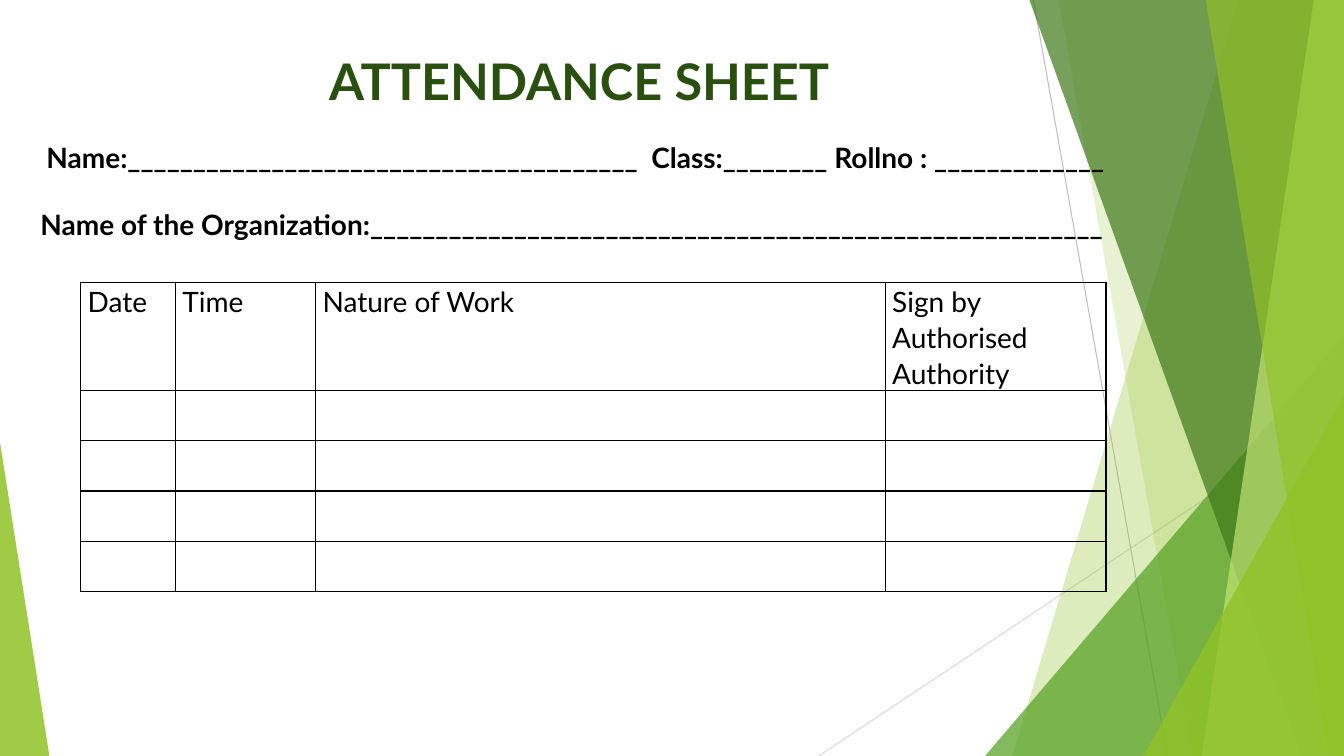
import pptx
import pptx.util
import pptx.dml.color
import pptx.enum.shapes
import pptx.enum.text
import pptx.oxml
import pptx.oxml.ns
from lxml import etree

Inches, Pt = pptx.util.Inches, pptx.util.Pt
RGBColor = pptx.dml.color.RGBColor
ALIGN = pptx.enum.text.PP_ALIGN
qn = pptx.oxml.ns.qn

BLACK = RGBColor(0x00, 0x00, 0x00)
TITLE_GREEN = RGBColor(0x2A, 0x50, 0x10)
LIME = RGBColor(0x90, 0xC2, 0x26)
GREEN = RGBColor(0x54, 0xA0, 0x21)
DARK_GREEN = RGBColor(0x3F, 0x78, 0x19)
PALE_LIME = RGBColor(0xC0, 0xE4, 0x74)
GREY = RGBColor(0xBF, 0xBF, 0xBF)
LIGHT_GREY = RGBColor(0xD9, 0xD9, 0xD9)
W, H = 13.33, 7.5


class Sheet:
    """Holds the text style and the current slide, and adds elements to it."""

    font = "Lato"

    def __init__(self, prs):
        self.s = prs.slides.add_slide(prs.slide_layouts[6])

    def line(self, x1, y1, x2, y2, color):
        c = self.s.shapes.add_connector(
            pptx.enum.shapes.MSO_CONNECTOR.STRAIGHT,
            Inches(x1), Inches(y1), Inches(x2), Inches(y2))
        c.line.color.rgb = color
        c.line.width = Pt(0.75)
        etree.SubElement(c._element.spPr, qn("a:effectLst"))

    def paint(self, sp, color, opacity):
        sp.shadow.inherit = False
        sp.fill.solid()
        sp.fill.fore_color.rgb = color
        sp.line.fill.background()
        clr = sp._element.spPr.find(qn("a:solidFill"))[0]
        etree.SubElement(clr, qn("a:alpha"), val=str(opacity * 1000))

    def band(self, points, color, opacity):
        points = [(Inches(x), Inches(y)) for x, y in points]
        fb = self.s.shapes.build_freeform(*points[0], scale=1.0)
        fb.add_line_segments(points[1:], close=True)
        self.paint(fb.convert_to_shape(), color, opacity)

    def triangle(self, x, y, w, h, apex, color, opacity):
        sp = self.s.shapes.add_shape(
            pptx.enum.shapes.MSO_SHAPE.ISOSCELES_TRIANGLE,
            Inches(x), Inches(y), Inches(w), Inches(h))
        sp.adjustments[0] = apex
        self.paint(sp, color, opacity)

    def run(self, p, text, size, color=BLACK, bold=False):
        r = p.add_run()
        r.text = text
        r.font.name = self.font
        r.font.size = Pt(size)
        r.font.bold = bold
        r.font.color.rgb = color

    def heading(self, x, y, w, h, title, fields):
        tf = self.s.shapes.add_textbox(
            Inches(x), Inches(y), Inches(w), Inches(h)).text_frame
        tf.word_wrap = True
        tf.margin_left = tf.margin_right = tf.margin_top = tf.margin_bottom = 0
        p = tf.paragraphs[0]
        p.alignment = ALIGN.CENTER
        self.run(p, title, 36, TITLE_GREEN, True)
        for text, before, indent, tab in fields:
            p = tf.add_paragraph()
            p.alignment = ALIGN.LEFT
            p.space_before = Pt(before)
            pPr = p._p.get_or_add_pPr()
            pPr.set("marL", str(Inches(indent)))
            pPr.set("indent", "0")
            if tab:
                tabs = etree.SubElement(pPr, qn("a:tabLst"))
                etree.SubElement(tabs, qn("a:tab"), pos=str(Inches(tab)), algn="l")
            self.run(p, text, 20, bold=True)

    def border(self, cell):
        tcPr = cell._tc.get_or_add_tcPr()
        for i, side in enumerate(("lnL", "lnR", "lnT", "lnB")):
            ln = etree.Element(qn("a:" + side), w=str(Pt(1)))
            fill = etree.SubElement(ln, qn("a:solidFill"))
            etree.SubElement(fill, qn("a:srgbClr"), val=str(BLACK))
            tcPr.insert(i, ln)

    def table(self, x, y, widths, heights, headers):
        tbl = self.s.shapes.add_table(
            len(heights), len(widths), Inches(x), Inches(y),
            Inches(sum(widths)), Inches(sum(heights))).table
        tbl.first_row = tbl.horz_banding = False
        for col, w in zip(tbl.columns, widths):
            col.width = Inches(w)
        for row, h in zip(tbl.rows, heights):
            row.height = Inches(h)
        for cell in tbl.iter_cells():
            cell.margin_left = cell.margin_right = Inches(0.07)
            cell.margin_top = cell.margin_bottom = 0
            cell.fill.background()
            self.border(cell)
        for cell, text in zip(tbl.rows[0].cells, headers):
            p = cell.text_frame.paragraphs[0]
            p.line_spacing = 1.07
            self.run(p, text, 20)


def main():
    prs = pptx.Presentation()
    prs.slide_width, prs.slide_height = Inches(W), Inches(H)
    sheet = Sheet(prs)

    sheet.line(10.25, 0, 11.58, H, GREY)
    sheet.line(W, 4.03, 8.12, H, LIGHT_GREY)

    def side_band(top, bottom, color, opacity):
        sheet.band([(top, 0), (W, 0), (W, H), (bottom, H)], color, opacity)

    side_band(12.28, 10.04, LIME, 30)
    side_band(10.5, 11.83, LIME, 20)
    sheet.triangle(9.77, 3.33, 3.56, 4.17, 1, GREEN, 72)
    side_band(10.21, 12.91, DARK_GREEN, 70)
    side_band(13.03, 11.92, PALE_LIME, 70)
    side_band(11.96, 13.18, LIME, 65)
    sheet.triangle(11.34, 3.93, 1.99, 3.57, 1, LIME, 80)
    sheet.triangle(0, 4.39, 0.49, 3.11, 0, LIME, 85)

    name = "Name:" + "_" * 39 + "\tClass:" + "_" * 8 + " Rollno : " + "_" * 13
    organization = "Name of the Organization:" + "_" * 56
    sheet.heading(0.4, 0.5, 10.69, 2, "ATTENDANCE SHEET",
                  [(name, 21, 0.06, 6.12), (organization, 24, 0, None)])
    sheet.table(0.8, 2.8, [0.94, 1.39, 5.65, 2.19], [1.07] + [0.5] * 4,
                ["Date", "Time", "Nature of Work", "Sign by Authorised Authority"])
    prs.save("out.pptx")


if __name__ == "__main__":
    main()
